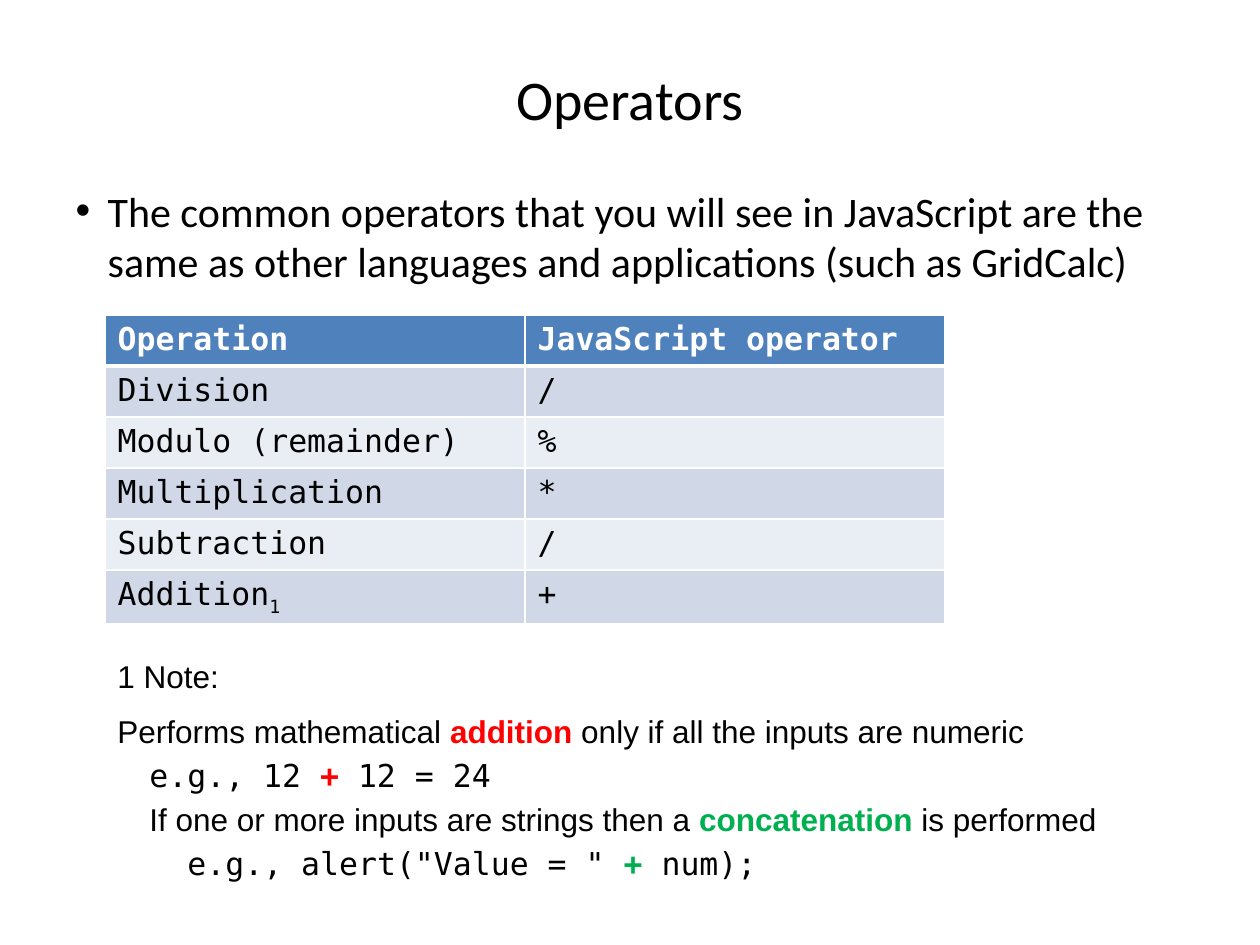
from dataclasses import dataclass

import lxml.etree
import pptx
import pptx.dml.color
import pptx.enum.text
import pptx.oxml.ns
import pptx.util

EMU_PER_PX = 914400 / 126
BLACK, WHITE, RED, GREEN = "000000", "FFFFFF", "FF0000", "00B050"
HEADER_FILL, BAND_FILLS = "4F81BD", ("D0D8E8", "E9EDF4")
MONO, SANS, TITLE_FONT = "DejaVu Sans Mono", "Arial", "Calibri"
ROW_HEIGHT, COLUMN_WIDTH = 51, 420
SUBSCRIPT = "-25000"


@dataclass(frozen=True)
class Span:
    text: str
    color: str = BLACK
    bold: bool = False
    baseline: str = ""


@dataclass(frozen=True)
class NoteLine:
    spans: tuple[Span, ...]
    font: str = SANS
    indent: int = 0
    before: float = 3.6
    after: float = 0


OPERATIONS = [
    ((Span("Operation", WHITE, True),), "JavaScript operator"),
    ((Span("Division"),), "/"),
    ((Span("Modulo (remainder)"),), "%"),
    ((Span("Multiplication"),), "*"),
    ((Span("Subtraction"),), "/"),
    ((Span("Addition"), Span("1", baseline=SUBSCRIPT)), "+"),
]

NOTE_LINES = [
    NoteLine((Span("1 Note:"),), before=0, after=6),
    NoteLine((
        Span("Performs mathematical "),
        Span("addition", RED, True),
        Span(" only if all the inputs are numeric"),
    )),
    NoteLine((Span("e.g., 12 "), Span("+", RED, True), Span(" 12 = 24")), MONO, 32),
    NoteLine((
        Span("If one or more inputs are strings then a "),
        Span("concatenation", GREEN, True),
        Span(" is performed"),
    ), indent=32),
    NoteLine((
        Span('e.g., alert("Value = " '),
        Span("+ ", GREEN, True),
        Span("num);"),
    ), MONO, 70),
]


def px(length: int) -> pptx.util.Emu:
    return pptx.util.Emu(round(length * EMU_PER_PX))


def rgb(color: str) -> pptx.dml.color.RGBColor:
    return pptx.dml.color.RGBColor.from_string(color)


def place(shape, left: int, top: int, width: int, height: int) -> None:
    box = {"left": left, "top": top, "width": width, "height": height}
    for name, length in box.items():
        setattr(shape, name, px(length))


def write_spans(paragraph, spans: tuple[Span, ...], font: str, size: int) -> None:
    for span in spans:
        run = paragraph.add_run()
        run.text = span.text
        formats = {"name": font, "size": pptx.util.Pt(size), "bold": span.bold}
        for name, value in formats.items():
            setattr(run.font, name, value)
        run.font.color.rgb = rgb(span.color)
        if span.baseline:
            run._r.get_or_add_rPr().set("baseline", span.baseline)


def set_indent(paragraph, left: int, first: int = 0) -> None:
    properties = paragraph._p.get_or_add_pPr()
    properties.set("marL", str(px(left)))
    properties.set("indent", str(px(first)))


def add_border(cell, side: str, points: int) -> None:
    qn = pptx.oxml.ns.qn
    line = lxml.etree.SubElement(
        cell._tc.get_or_add_tcPr(), qn(f"a:ln{side}"), w=str(pptx.util.Pt(points)))
    fill = lxml.etree.SubElement(line, qn("a:solidFill"))
    lxml.etree.SubElement(fill, qn("a:srgbClr"), val=WHITE)


def fill_placeholder(shape, text: str, size: int) -> None:
    shape.text_frame.auto_size = pptx.enum.text.MSO_AUTO_SIZE.NONE
    write_spans(shape.text_frame.paragraphs[0], (Span(text),), TITLE_FONT, size)


def add_operations(slide) -> None:
    table = slide.shapes.add_table(
        len(OPERATIONS), 2, px(105), px(315),
        px(2 * COLUMN_WIDTH), px(len(OPERATIONS) * ROW_HEIGHT)).table
    for column in table.columns:
        column.width = px(COLUMN_WIDTH)
    for index, (operation, operator) in enumerate(OPERATIONS):
        table.rows[index].height = px(ROW_HEIGHT)
        header = index == 0
        fill = HEADER_FILL if header else BAND_FILLS[(index - 1) % 2]
        operator_span = Span(operator, WHITE if header else BLACK, header)
        widths = {"L": 1, "R": 1, "T": 3 if index == 1 else 1, "B": 3 if header else 1}
        for column, spans in enumerate((operation, (operator_span,))):
            cell = table.cell(index, column)
            for side, points in widths.items():
                add_border(cell, side, points)
            cell.fill.solid()
            cell.fill.fore_color.rgb = rgb(fill)
            write_spans(cell.text_frame.paragraphs[0], spans, MONO, 18)


def add_note(slide) -> None:
    frame = slide.shapes.add_textbox(px(105), px(651), px(1102), px(262)).text_frame
    frame.word_wrap = True
    for index, line in enumerate(NOTE_LINES):
        paragraph = frame.add_paragraph() if index else frame.paragraphs[0]
        set_indent(paragraph, line.indent)
        paragraph.space_before = pptx.util.Pt(line.before)
        paragraph.space_after = pptx.util.Pt(line.after)
        write_spans(paragraph, line.spans, line.font, 18)


def main() -> None:
    deck = pptx.Presentation()
    deck.slide_width, deck.slide_height = px(1260), px(945)
    slide = deck.slides.add_slide(deck.slide_layouts[1])

    title, body = slide.shapes.title, slide.placeholders[1]
    place(title, 63, 38, 1134, 120)
    fill_placeholder(title, "Operators", 32)
    place(body, 63, 179, 1134, 116)
    fill_placeholder(
        body,
        "The common operators that you will see in JavaScript are the same as "
        "other languages and applications (such as GridCalc)",
        24)
    set_indent(body.text_frame.paragraphs[0], 32, -32)

    add_operations(slide)
    add_note(slide)
    deck.save("out.pptx")


if __name__ == "__main__":
    main()
